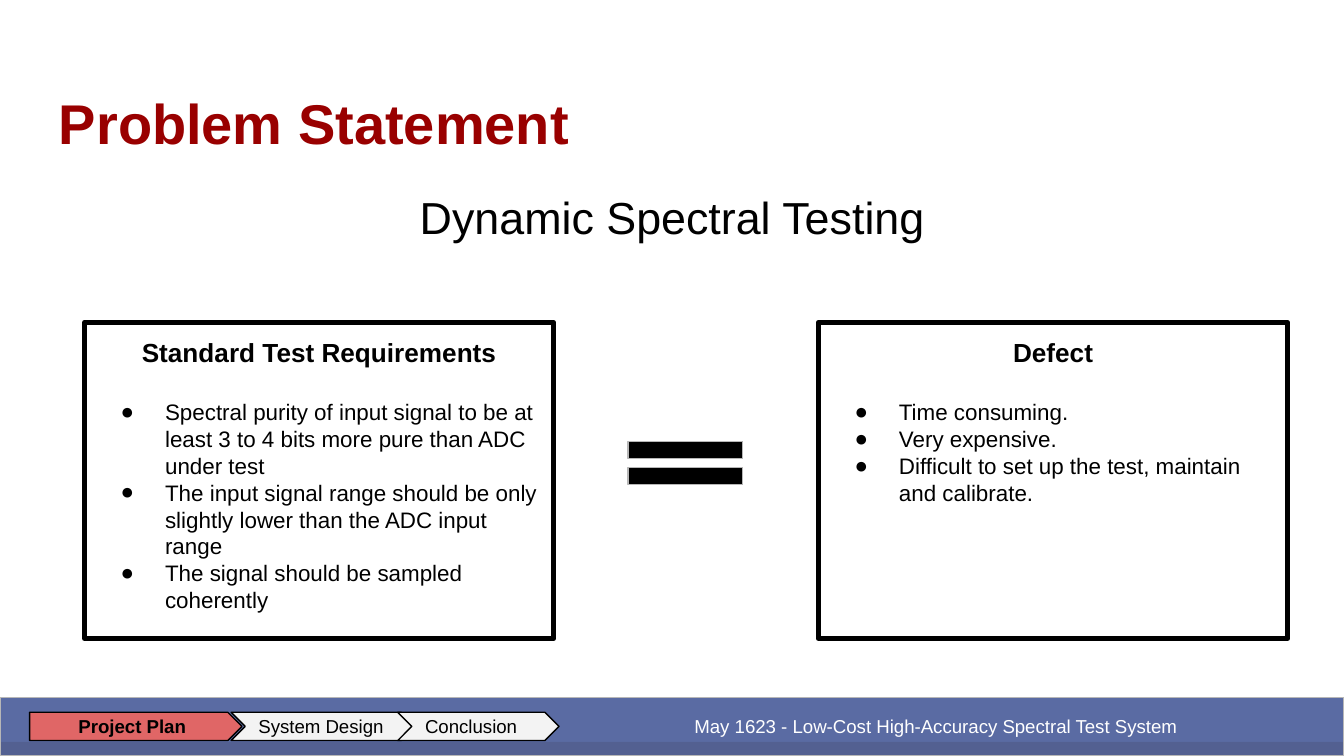
"""Build the Problem Statement slide."""
import pptx
import pptx.util
import pptx.dml.color
import pptx.enum.shapes
import pptx.enum.text
import pptx.oxml.ns
import lxml.etree

Inches = pptx.util.Inches
Pt = pptx.util.Pt
RGBColor = pptx.dml.color.RGBColor
KIND = pptx.enum.shapes.MSO_SHAPE
ALIGN = pptx.enum.text.PP_ALIGN
ANCHOR = pptx.enum.text.MSO_ANCHOR
qn = pptx.oxml.ns.qn

BLACK = RGBColor(0, 0, 0)
WHITE = RGBColor(255, 255, 255)
MAROON = RGBColor(0x99, 0, 0)
TAN = RGBColor(0xCC, 0xA6, 0x77)
BLUE = RGBColor(0x42, 0x56, 0x96)
GREY = RGBColor(0xB7, 0xB7, 0xB7)
PALE = RGBColor(0xF3, 0xF3, 0xF3)
CORAL = RGBColor(0xE0, 0x66, 0x66)

TITLE = "Problem Statement"
TOPIC = "Dynamic Spectral Testing"
FOOTER = "May 1623 - Low-Cost High-Accuracy Spectral Test System"
CARDS = [
    (0.63, "Standard Test Requirements", [
        "Spectral purity of input signal to be at least 3 to 4 bits more pure than ADC under test",
        "The input signal range should be only slightly lower than the ADC input range",
        "The signal should be sampled coherently",
    ]),
    (6.09, "Defect", [
        "Time consuming.",
        "Very expensive.",
        "Difficult to set up the test, maintain and calibrate.",
    ]),
]
STEPS = [
    ("Project Plan", 0.22, 1.58, KIND.PENTAGON, CORAL, ALIGN.CENTER, True),
    ("System Design", 1.72, 1.37, KIND.CHEVRON, PALE, ALIGN.LEFT, False),
    ("Conclusion", 2.96, 1.2, KIND.CHEVRON, PALE, ALIGN.LEFT, False),
]


def set_frame(shape, anchor, left=0.1):
    frame = shape.text_frame
    frame.word_wrap = True
    frame.vertical_anchor = anchor
    frame.margin_left = Inches(left)
    frame.margin_right = frame.margin_top = frame.margin_bottom = Inches(0.1)
    return frame


def write(para, text, size, color=BLACK, bold=False, align=ALIGN.LEFT):
    para.text = text
    para.alignment = align
    font = para.runs[0].font
    font.name, font.size, font.bold = "Arial", Pt(size), bold
    font.color.rgb = color


def add_shape(slide, kind, box, fill=None, line=None, width=0.75):
    shape = slide.shapes.add_shape(kind, *map(Inches, box))
    shape.shadow.inherit = False
    if fill is None:
        shape.fill.background()
    else:
        shape.fill.solid()
        shape.fill.fore_color.rgb = fill
    if line is None:
        shape.line.fill.background()
    else:
        shape.line.color.rgb = line
        shape.line.width = Pt(width)
    return shape


def add_text(slide, box, anchor):
    return set_frame(slide.shapes.add_textbox(*map(Inches, box)), anchor)


def add_bullet(para):
    props = para._p.get_or_add_pPr()
    props.set("marL", str(Inches(0.5)))
    props.set("indent", str(Inches(-0.33)))
    lxml.etree.SubElement(props, qn("a:buFont")).set("typeface", "Arial")
    lxml.etree.SubElement(props, qn("a:buChar")).set("char", "●")


def add_card(slide, left, head, points):
    card = add_shape(slide, KIND.RECTANGLE, (left, 2.4, 3.49, 2.35), line=BLACK, width=3)
    frame = set_frame(card, ANCHOR.TOP)
    first = frame.paragraphs[0]
    write(first, head, 14, bold=True, align=ALIGN.CENTER)
    first.space_after = Pt(16.5)
    for point in points:
        para = frame.add_paragraph()
        write(para, point, 12)
        add_bullet(para)


def add_footer(slide):
    bar = add_shape(slide, KIND.RECTANGLE, (0, 5.19, 10, 0.43), BLUE, GREY)
    tint = bar._element.spPr.find(qn("a:solidFill")).find(qn("a:srgbClr"))
    lxml.etree.SubElement(tint, qn("a:alpha")).set("val", "87000")
    frame = set_frame(bar, ANCHOR.MIDDLE, 4.02)
    write(frame.paragraphs[0], FOOTER, 10, WHITE, align=ALIGN.CENTER)
    for label, left, width, kind, fill, align, bold in STEPS:
        step = add_shape(slide, kind, (left, 5.3, width, 0.21), fill, BLACK)
        frame = set_frame(step, ANCHOR.MIDDLE)
        write(frame.paragraphs[0], label, 10, bold=bold, align=align)


def main():
    deck = pptx.Presentation()
    deck.slide_width = Inches(10)
    deck.slide_height = deck.slide_width * 9 // 16
    slide = deck.slides.add_slide(deck.slide_layouts[6])
    add_shape(slide, KIND.RECTANGLE, (0, 5.52, 10, 0.11), TAN)
    title = add_text(slide, (0.34, 0.35, 9.32, 0.91), ANCHOR.BOTTOM)
    write(title.paragraphs[0], TITLE, 30, MAROON, True)
    topic = add_text(slide, (0.34, 1.25, 9.32, 3.67), ANCHOR.TOP).paragraphs[0]
    write(topic, TOPIC, 24, align=ALIGN.CENTER)
    topic.line_spacing = 1.15
    topic.space_after = Pt(16)
    for card in CARDS:
        add_card(slide, *card)
    equal = add_shape(slide, KIND.MATH_EQUAL, (4.52, 3.17, 1.16, 0.55), BLACK, GREY)
    equal.adjustments[0] = 0.235
    equal.adjustments[1] = 0.118
    add_footer(slide)
    deck.save("out.pptx")


if __name__ == "__main__":
    main()
